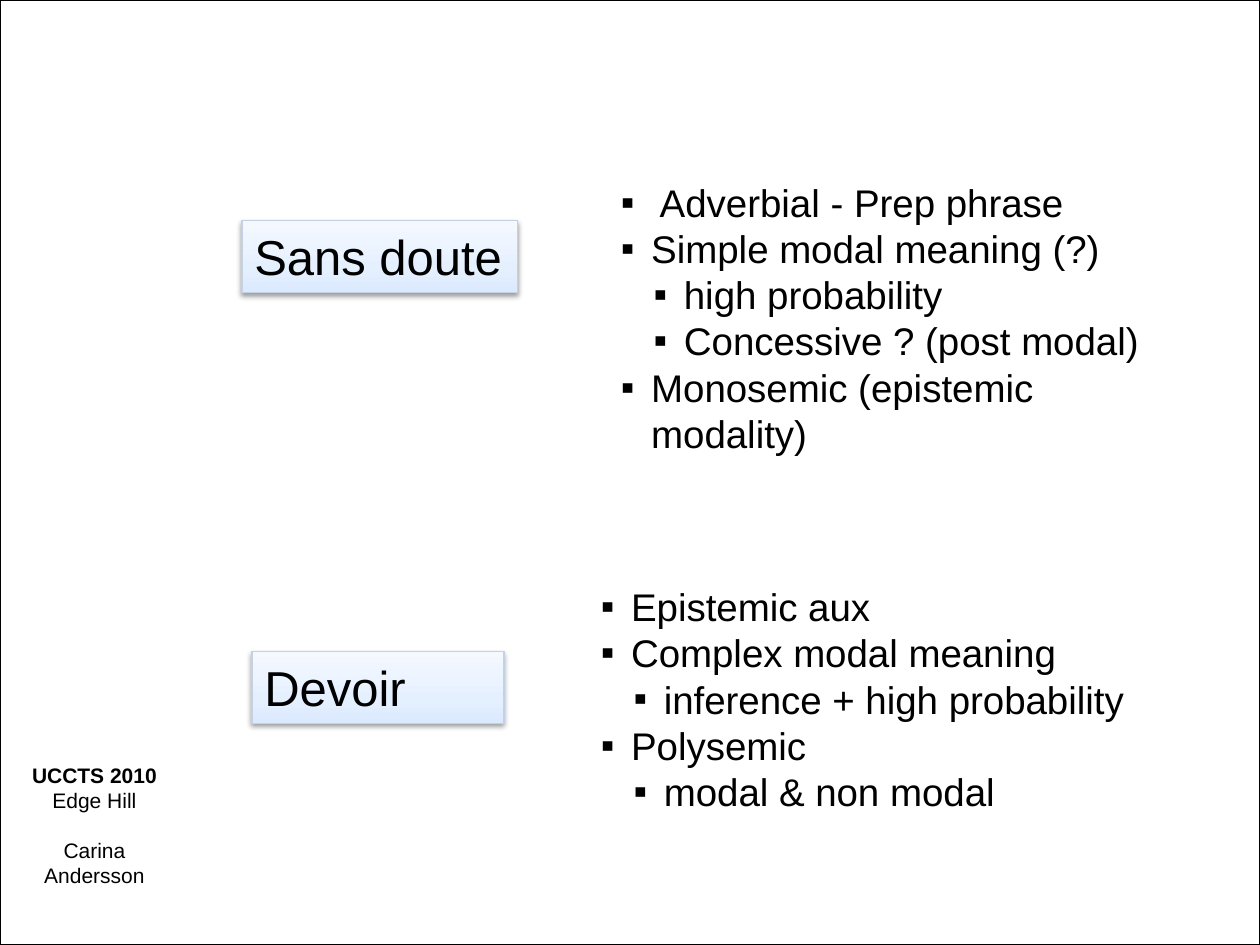
from copy import deepcopy

from lxml import etree
from pptx import Presentation
from pptx.dml.color import RGBColor
from pptx.enum.shapes import MSO_SHAPE
from pptx.enum.text import MSO_ANCHOR, PP_ALIGN
from pptx.oxml.ns import qn
from pptx.util import Inches, Pt

BLACK = RGBColor(0x00, 0x00, 0x00)
LABEL_LINE = RGBColor(0xC2, 0xD1, 0xE6)
LABEL_STOPS = [
    (0, RGBColor(0xDB, 0xEA, 0xFF)),
    (0.35, RGBColor(0xE5, 0xF0, 0xFF)),
    (1, RGBColor(0xF5, 0xF9, 0xFF)),
]
FONT = "Arial"
BULLET_HANG = 0.24
BULLET_MARGINS = [BULLET_HANG, 0.5]

SANS_DOUTE = [
    (0, " Adverbial - Prep phrase"),
    (0, "Simple modal meaning (?)"),
    (1, "high probability"),
    (1, "Concessive ? (post modal)"),
    (0, "Monosemic (epistemic modality)"),
]
DEVOIR = [
    (0, "Epistemic aux"),
    (0, "Complex modal meaning"),
    (1, "inference + high probability"),
    (0, "Polysemic"),
    (1, "modal & non modal"),
]


def write(p, text, size, bold=False, align=PP_ALIGN.LEFT, before=0):
    p.alignment = align
    if before:
        p.space_before = Pt(before)
    r = p.add_run()
    r.text = text
    r.font.name = FONT
    r.font.size = Pt(size)
    r.font.bold = bold
    r.font.color.rgb = BLACK


def paragraphs(tf, count):
    return [tf.paragraphs[0]] + [tf.add_paragraph() for _ in range(count - 1)]


def add_text_box(slide, left, top, width, height):
    sp = slide.shapes.add_textbox(Inches(left), Inches(top), Inches(width), Inches(height))
    sp.text_frame.word_wrap = True
    return sp.text_frame


def add_rectangle(slide, left, top, width, height, line):
    sp = slide.shapes.add_shape(
        MSO_SHAPE.RECTANGLE, Inches(left), Inches(top), Inches(width), Inches(height))
    sp.shadow.inherit = False
    sp.line.color.rgb = line
    sp.line.width = Pt(0.75)
    return sp


def fill_gradient(sp):
    sp.fill.gradient()
    sp.fill.gradient_angle = 90
    first = sp._element.spPr.find(".//" + qn("a:gs"))
    first.addnext(deepcopy(first))
    for stop, (position, color) in zip(sp.fill.gradient_stops, LABEL_STOPS):
        stop.position = position
        stop.color.rgb = color


def add_shadow(sp):
    effects = sp._element.spPr.find(qn("a:effectLst"))
    shadow = etree.SubElement(
        effects, qn("a:outerShdw"), blurRad=str(Pt(3.1)), dist=str(Pt(1.6)),
        dir="5400000", rotWithShape="0")
    color = etree.SubElement(shadow, qn("a:srgbClr"), val=str(BLACK))
    etree.SubElement(color, qn("a:alpha"), val="38000")


def add_label(slide, text, left, top, width, wrap=True):
    sp = add_rectangle(slide, left, top, width, 0.57, LABEL_LINE)
    fill_gradient(sp)
    add_shadow(sp)
    tf = sp.text_frame
    tf.word_wrap = wrap
    tf.vertical_anchor = MSO_ANCHOR.TOP
    write(tf.paragraphs[0], text, 28)


def add_bullets(slide, items, left, top, width, height, margin_top=0.05):
    tf = add_text_box(slide, left, top, width, height)
    tf.margin_top = Inches(margin_top)
    for p, (level, text) in zip(paragraphs(tf, len(items)), items):
        p.level = level
        pPr = p._p.get_or_add_pPr()
        pPr.set("marL", str(Inches(BULLET_MARGINS[level])))
        pPr.set("indent", str(-Inches(BULLET_HANG)))
        etree.SubElement(pPr, qn("a:buFont"), typeface=FONT)
        etree.SubElement(pPr, qn("a:buChar"), char="▪")
        write(p, text, 22)


def add_credit(slide):
    tf = add_text_box(slide, 0, 6, 1.5, 1.33)
    event, place, author = paragraphs(tf, 3)
    write(event, "UCCTS 2010", 12, bold=True, align=PP_ALIGN.CENTER)
    write(place, "Edge Hill", 12, align=PP_ALIGN.CENTER)
    write(author, "Carina Andersson", 12, align=PP_ALIGN.CENTER, before=14)


def main():
    prs = Presentation()
    prs.slide_width, prs.slide_height = Inches(10), Inches(7.5)
    slide = prs.slides.add_slide(prs.slide_layouts[6])

    frame = add_rectangle(slide, 0, 0, 10, 7.5, BLACK)
    frame.fill.background()
    add_credit(slide)
    add_label(slide, "Sans doute", 1.92, 1.75, 2.19, wrap=False)
    add_label(slide, "Devoir", 2, 5.17, 2)
    add_bullets(slide, SANS_DOUTE, 4.83, 1, 4.73, 2.73, margin_top=0.42)
    add_bullets(slide, DEVOIR, 4.67, 4.58, 4.83, 2.36)

    prs.save("out.pptx")


if __name__ == "__main__":
    main()
